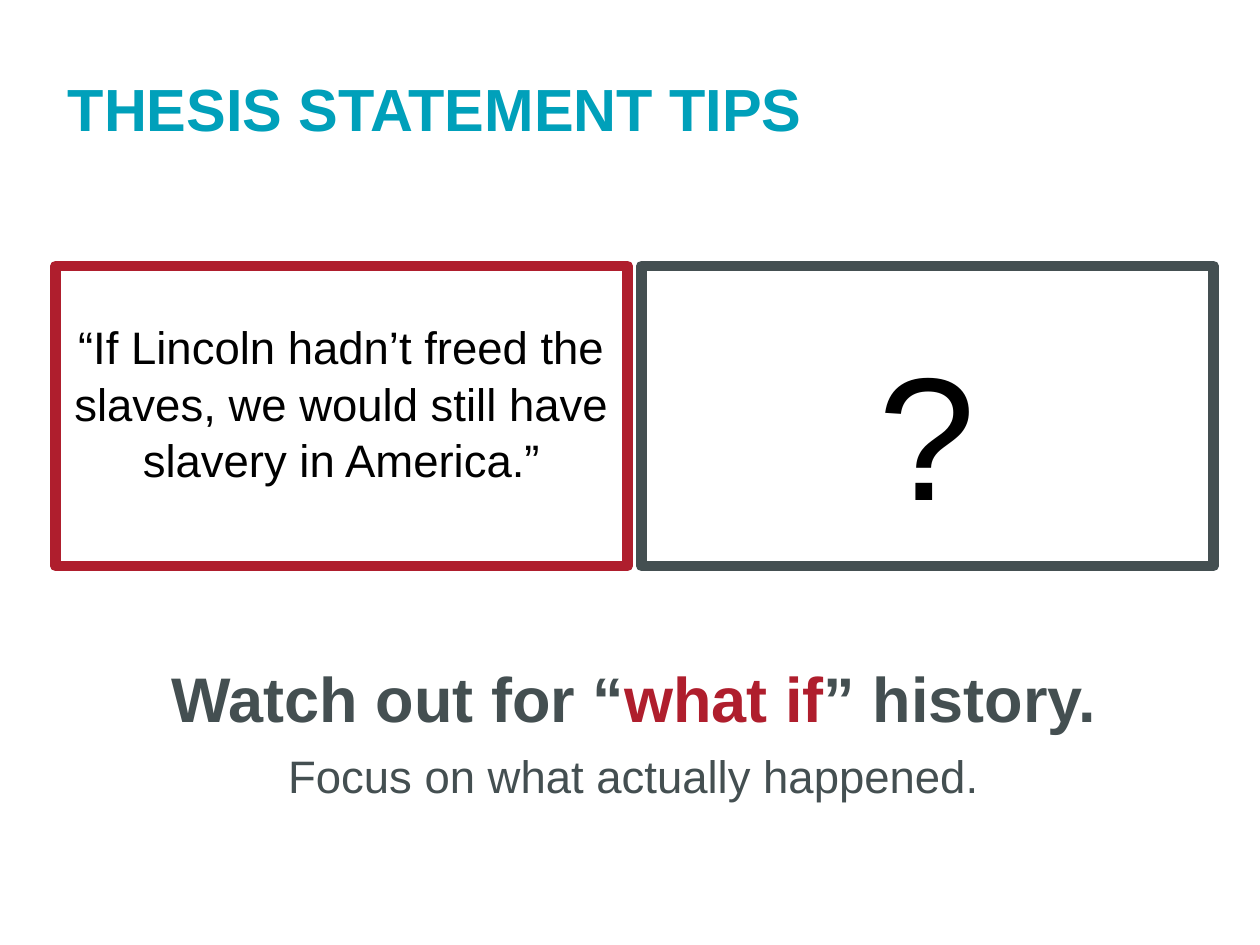
import pptx
import pptx.util
import pptx.dml.color
import pptx.enum.shapes
import pptx.enum.text

Pt = pptx.util.Pt
RGB = pptx.dml.color.RGBColor
ALIGN = pptx.enum.text.PP_ALIGN

TEAL = RGB(0x00, 0xA0, 0xBA)
RED = RGB(0xAF, 0x1E, 0x2D)
SLATE = RGB(0x44, 0x4F, 0x51)
BLACK = RGB(0, 0, 0)

BOX_TOP, BOX_WIDTH, BOX_HEIGHT = 152, 327, 171.5


def style(run, size, color, bold=False):
    run.font.name = "Arial"
    run.font.size = Pt(size)
    run.font.color.rgb = color
    run.font.bold = bold


def set_frame(frame, top):
    frame.word_wrap = True
    frame.vertical_anchor = pptx.enum.text.MSO_ANCHOR.TOP
    frame.margin_left = frame.margin_right = Pt(7.2)
    frame.margin_top = Pt(top)
    frame.margin_bottom = Pt(3.6)


def add_text(slide, left, top, width, height, inset):
    box = slide.shapes.add_textbox(Pt(left), Pt(top), Pt(width), Pt(height))
    set_frame(box.text_frame, inset)
    return box.text_frame


def add_title(slide):
    frame = add_text(slide, 31.7, 31, 661, 53.3, 10.2)
    frame.text = "THESIS STATEMENT TIPS"
    style(frame.paragraphs[0].runs[0], 34, TEAL, True)


def add_box(slide, left, color, text, size):
    box = slide.shapes.add_shape(
        pptx.enum.shapes.MSO_SHAPE.RECTANGLE,
        Pt(left), Pt(BOX_TOP), Pt(BOX_WIDTH), Pt(BOX_HEIGHT))
    box.shadow.inherit = False
    box.fill.background()
    box.line.color.rgb = color
    box.line.width = Pt(6)
    frame = box.text_frame
    set_frame(frame, 29)
    frame.text = text
    para = frame.paragraphs[0]
    para.alignment = ALIGN.CENTER
    para.line_spacing = 1.04
    style(para.runs[0], size, BLACK)


def add_advice(slide):
    frame = add_text(slide, 42.5, 370, 639.4, 116.6, 7)
    head = frame.paragraphs[0]
    head.alignment = ALIGN.CENTER
    parts = [("Watch out for “", SLATE), ("what if", RED), ("” history.", SLATE)]
    for text, color in parts:
        run = head.add_run()
        run.text = text
        style(run, 36, color, True)
    note = frame.add_paragraph()
    note.text = "Focus on what actually happened."
    note.alignment = ALIGN.CENTER
    note.space_before = Pt(7)
    style(note.runs[0], 26, SLATE)


def main():
    deck = pptx.Presentation()
    deck.slide_width, deck.slide_height = Pt(720), Pt(540)
    slide = deck.slides.add_slide(deck.slide_layouts[6])
    add_advice(slide)
    add_title(slide)
    quote = ("“If Lincoln hadn’t freed the slaves, "
             "we would still have slavery in America.”")
    add_box(slide, 31.7, RED, quote, 26)
    add_box(slide, 366.5, SLATE, "?", 100)
    deck.save("out.pptx")


if __name__ == "__main__":
    main()
